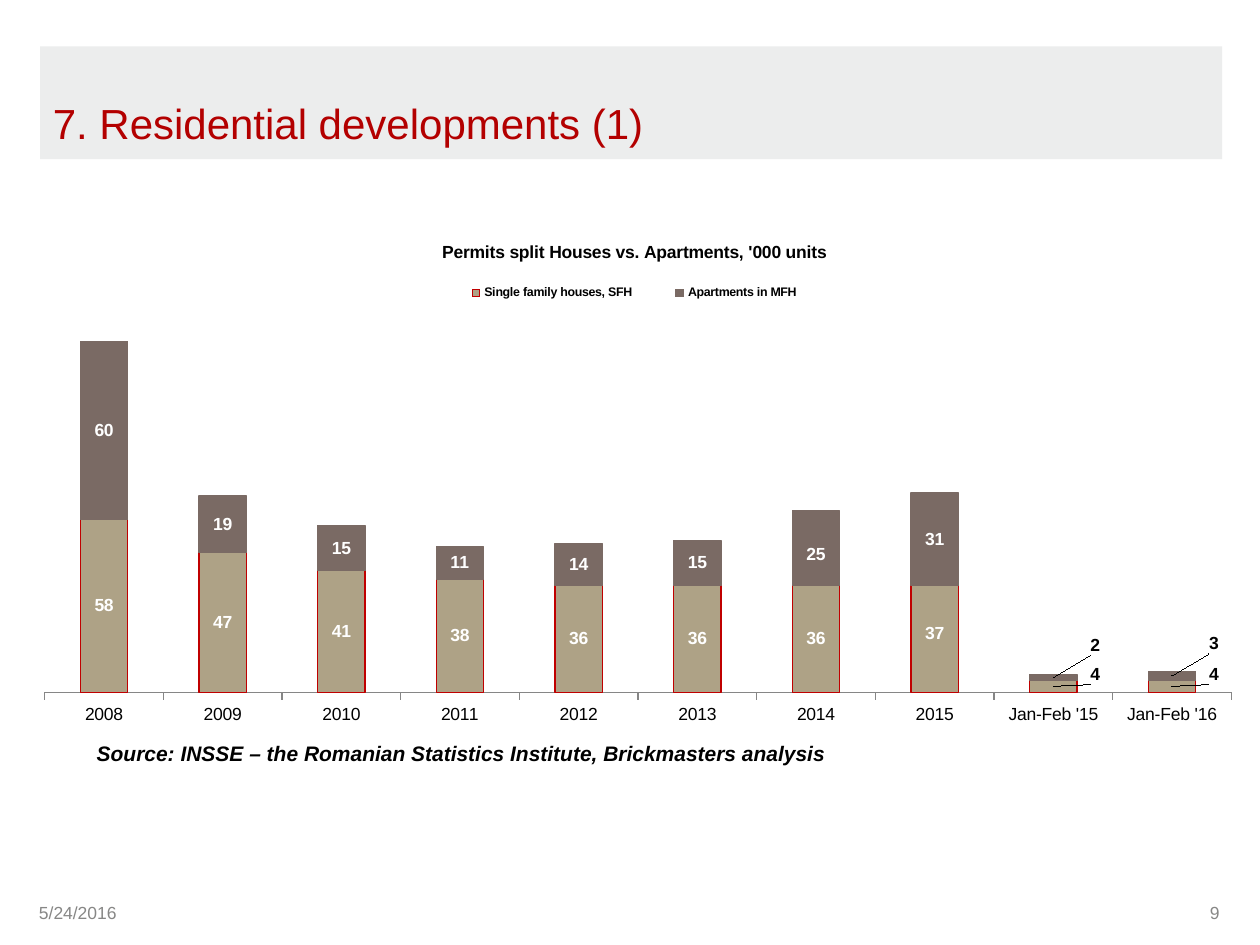
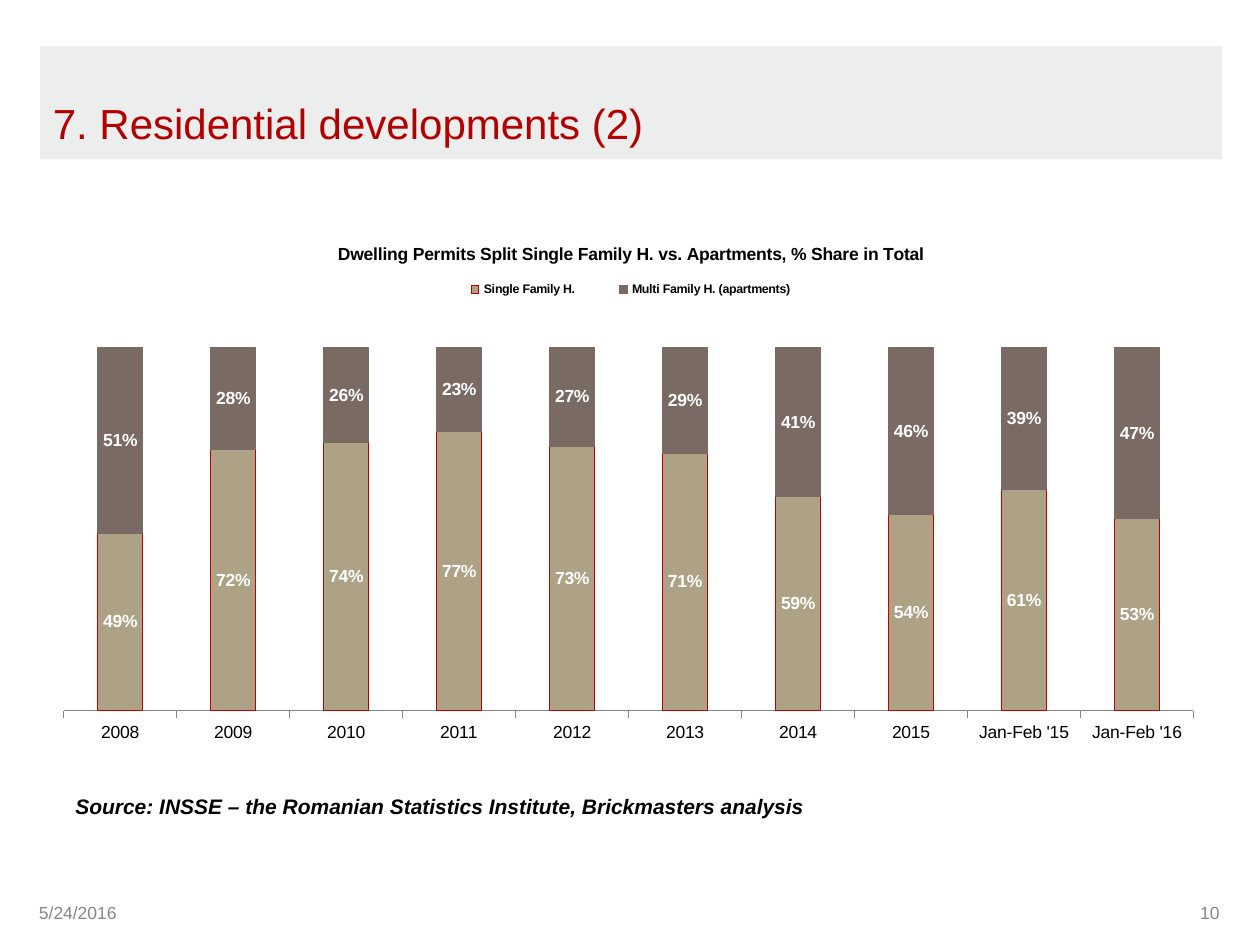
"""Build two slides on residential building permits, each with a stacked column chart."""
from lxml import etree
from pptx import Presentation
from pptx.chart.data import CategoryChartData
from pptx.dml.color import RGBColor
from pptx.enum.chart import XL_CHART_TYPE, XL_LABEL_POSITION, XL_LEGEND_POSITION, XL_TICK_MARK
from pptx.enum.shapes import MSO_SHAPE
from pptx.enum.text import MSO_ANCHOR, PP_ALIGN
from pptx.oxml.ns import qn
from pptx.util import Pt

FONT = "Arial"
BAND = RGBColor(0xEC, 0xED, 0xED)
TITLE_RED = RGBColor(0xB3, 0x00, 0x00)
FOOTER_GREY = RGBColor(0x87, 0x87, 0x86)
AXIS_GREY = RGBColor(0x86, 0x86, 0x86)
BLACK = RGBColor(0, 0, 0)
WHITE = RGBColor(0xFF, 0xFF, 0xFF)
SAND = RGBColor(0xAE, 0xA2, 0x86)
TAUPE = RGBColor(0x7A, 0x6A, 0x64)
OUTLINE_RED = RGBColor(0xC0, 0x00, 0x00)

DATE = "5/24/2016"
SOURCE = "Source: INSSE – the Romanian Statistics Institute, Brickmasters analysis"
PERIODS = [str(year) for year in range(2008, 2016)] + ["Jan-Feb '15", "Jan-Feb '16"]
SERIES_COLORS = [(SAND, OUTLINE_RED), (TAUPE, TAUPE)]

SLIDES = [
    {
        "title": "7. Residential developments (1)",
        "number": "9",
        "chart_title": "Permits split Houses vs. Apartments, '000 units",
        "series": [
            ("Single family houses, SFH", [58, 47, 41, 38, 36, 36, 36, 36, 4, 4]),
            ("Apartments in MFH", [60, 19, 15, 11, 14, 15, 25, 31, 2, 3]),
        ],
        "format": "#,##0",
        "max": 120,
        "chart_box": (12.2, 123.8, 702, 290.2),
        "title_at": (0.34, 0.04),
        "legend_at": (0.334, 0.12, 0.33, 0.06),
        "plot_at": (0.019, 0.234, 0.966, 0.703),
        "source_box": (48.2, 419.8, 504, 43.9),
        "moved_labels": [
            (0, 7, 0, -0.01, WHITE, "37"),
            (0, 8, 0.034, -0.023, BLACK, None),
            (0, 9, 0.034, -0.023, BLACK, None),
            (1, 6, 0, 0.012, WHITE, None),
            (1, 8, 0.034, -0.063, BLACK, None),
            (1, 9, 0.034, -0.063, BLACK, None),
        ],
    },
    {
        "title": "7. Residential developments (2)",
        "number": "10",
        "chart_title": "Dwelling Permits Split Single Family H. vs. Apartments, % Share in Total",
        "series": [
            ("Single Family H.", [0.49, 0.72, 0.74, 0.77, 0.73, 0.71, 0.59, 0.54, 0.61, 0.53]),
            ("Multi Family H. (apartments)",
             [0.51, 0.28, 0.26, 0.23, 0.27, 0.29, 0.41, 0.46, 0.39, 0.47]),
        ],
        "format": "0%",
        "max": 1,
        "chart_box": (23, 123.8, 673.2, 326.2),
        "title_at": (0.25, 0.04),
        "legend_at": (0.331, 0.1, 0.341, 0.055),
        "plot_at": (0.02, 0.23, 0.959, 0.636),
        "source_box": (36, 450, 576, 43.9),
        "moved_labels": [],
    },
]


def set_font(font, size, color, bold=False, italic=False):
    font.name, font.size, font.bold, font.italic = FONT, Pt(size), bold, italic
    font.color.rgb = color


def add_text(s, box, text, size, color, bold=False, italic=False,
             anchor=MSO_ANCHOR.TOP, align=PP_ALIGN.LEFT, margins=(7.2, 3.6)):
    tf = s.shapes.add_textbox(*map(Pt, box)).text_frame
    tf.word_wrap = True
    tf.vertical_anchor = anchor
    tf.margin_left = tf.margin_right = Pt(margins[0])
    tf.margin_top = tf.margin_bottom = Pt(margins[1])
    p = tf.paragraphs[0]
    p.alignment = align
    r = p.add_run()
    r.text = text
    set_font(r.font, size, color, bold, italic)


def add_frame(s, title, number):
    band = s.shapes.add_shape(MSO_SHAPE.RECTANGLE, Pt(23), Pt(26.6), Pt(675.4), Pt(64.4))
    band.shadow.inherit = False
    band.fill.solid()
    band.fill.fore_color.rgb = BAND
    band.line.fill.background()
    add_text(s, (30.2, 28.1, 426, 56.2), title, 24, TITLE_RED,
             anchor=MSO_ANCHOR.BOTTOM, margins=(0, 0))
    for left, width, text, align in [(22.3, 100.8, DATE, PP_ALIGN.LEFT),
                                     (666.7, 30.2, number, PP_ALIGN.RIGHT)]:
        add_text(s, (left, 514.1, width, 14.4), text, 10, FOOTER_GREY,
                 anchor=MSO_ANCHOR.MIDDLE, align=align, margins=(0, 3.6))


def set_layout(parent, values, index=1, inner=False, edge=True):
    for old in parent.findall(qn("c:layout")):
        parent.remove(old)
    layout = etree.Element(qn("c:layout"))
    manual = etree.SubElement(layout, qn("c:manualLayout"))
    settings = [("layoutTarget", "inner")] if inner else []
    if edge:
        settings += [("xMode", "edge"), ("yMode", "edge")]
    settings += zip("xywh", values)
    for tag, value in settings:
        etree.SubElement(manual, qn("c:" + tag)).set("val", str(value))
    parent.insert(index, layout)


def style_axes(chart, maximum):
    axis = chart.category_axis
    axis.major_tick_mark = XL_TICK_MARK.OUTSIDE
    axis.has_major_gridlines = False
    axis.format.line.color.rgb = AXIS_GREY
    axis.format.line.width = Pt(0.75)
    set_font(axis.tick_labels.font, 10, BLACK)
    values = chart.value_axis
    values.visible = False
    values.has_major_gridlines = False
    values.minimum_scale, values.maximum_scale = 0, maximum


def style_series(plot, number_format):
    plot.gap_width, plot.overlap = 150, 100
    plot.vary_by_categories = False
    for series, (fill, line) in zip(plot.series, SERIES_COLORS):
        series.format.fill.solid()
        series.format.fill.fore_color.rgb = fill
        series.format.line.color.rgb = line
        series.format.line.width = Pt(0.75)
        labels = series.data_labels
        labels.show_value = True
        labels.number_format = number_format
        labels.number_format_is_linked = False
        labels.position = XL_LABEL_POSITION.CENTER
        set_font(labels.font, 10, WHITE, bold=True)


def move_label(series, index, dx, dy, color, text):
    label = series.points[index].data_label
    if text:
        r = label.text_frame.paragraphs[0].add_run()
        r.text = text
        set_font(r.font, 10, color, bold=True)
    else:
        set_font(label.font, 10, color, bold=True)
    labels = series.data_labels._element
    entry = next(e for e in labels.findall(qn("c:dLbl"))
                 if e.find(qn("c:idx")).get("val") == str(index))
    set_layout(entry, (dx, dy), edge=False)


def add_permit_chart(s, content):
    data = CategoryChartData(number_format=content["format"])
    data.categories = PERIODS
    for name, values in content["series"]:
        data.add_series(name, values)
    chart = s.shapes.add_chart(XL_CHART_TYPE.COLUMN_STACKED,
                               *map(Pt, content["chart_box"]), data).chart
    set_font(chart.font, 10, BLACK)
    title = chart.chart_title
    r = title.text_frame.paragraphs[0].add_run()
    r.text = content["chart_title"]
    set_font(r.font, 10, BLACK, bold=True)
    set_layout(title._element, content["title_at"])
    chart.has_legend = True
    legend = chart.legend
    legend.position = XL_LEGEND_POSITION.BOTTOM
    legend.include_in_layout = False
    set_font(legend.font, 7.1, BLACK, bold=True)
    set_layout(legend._element, content["legend_at"])
    style_axes(chart, content["max"])
    plot = chart.plots[0]
    style_series(plot, content["format"])
    for series_index, *move in content["moved_labels"]:
        move_label(plot.series[series_index], *move)
    plot_area = chart._chartSpace.find(".//" + qn("c:plotArea"))
    set_layout(plot_area, content["plot_at"], index=0, inner=True)


def main():
    prs = Presentation()
    prs.slide_width, prs.slide_height = Pt(720), Pt(540)
    for content in SLIDES:
        s = prs.slides.add_slide(prs.slide_layouts[6])
        add_frame(s, content["title"], content["number"])
        add_permit_chart(s, content)
        add_text(s, content["source_box"], SOURCE, 12, BLACK, bold=True, italic=True)
    prs.save("out.pptx")


if __name__ == "__main__":
    main()
